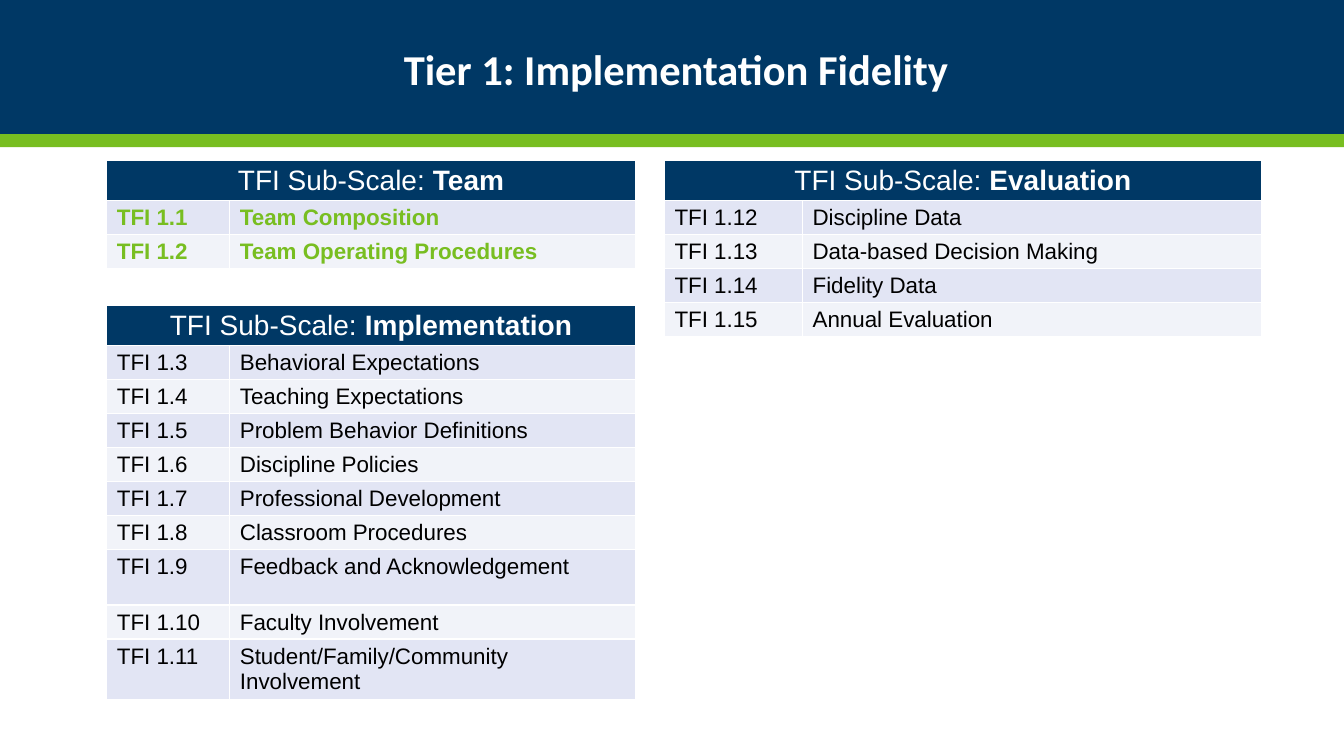
from pptx import Presentation
from pptx.dml.color import RGBColor
from pptx.enum.shapes import MSO_SHAPE
from pptx.enum.text import MSO_ANCHOR, PP_ALIGN
from pptx.util import Inches, Pt

COLORS = {"navy": "003865", "green": "78BE21", "white": "FFFFFF", "black": "000000",
          "odd": "E2E5F4", "even": "F1F3F9"}

TABLES = [
    {"name": "Evaluation", "left": 6.59, "top": 1.59, "cols": [1.37, 4.55], "first": 12,
     "items": ["Discipline Data", "Data-based Decision Making", "Fidelity Data",
               "Annual Evaluation"],
     "color": "black", "bold": False},
    {"name": "Implementation", "left": 1.06, "top": 3.03, "cols": [1.22, 4.02], "first": 3,
     "items": ["Behavioral Expectations", "Teaching Expectations",
               "Problem Behavior Definitions", "Discipline Policies",
               "Professional Development", "Classroom Procedures",
               "Feedback and Acknowledgement", "Faculty Involvement",
               "Student/Family/Community Involvement"],
     "color": "black", "bold": False},
    {"name": "Team", "left": 1.06, "top": 1.59, "cols": [1.22, 4.02], "first": 1,
     "items": ["Team Composition", "Team Operating Procedures"],
     "color": "green", "bold": True},
]
ROW_HEIGHTS = {"Feedback and Acknowledgement": 0.55,
               "Student/Family/Community Involvement": 0.6}


def rgb(name):
    return RGBColor.from_string(COLORS[name])


def format_run(r, font, size, color, bold):
    r.font.name = font
    r.font.size = Pt(size)
    r.font.color.rgb = rgb(color)
    r.font.bold = bold


prs = Presentation()
prs.slide_width = Inches(13.33)
prs.slide_height = Inches(7.5)
s = prs.slides.add_slide(prs.slide_layouts[5])

for top, height, color in [(0, 1.33, "navy"), (1.33, 0.13, "green")]:
    sp = s.shapes.add_shape(MSO_SHAPE.RECTANGLE, 0, Inches(top), prs.slide_width, Inches(height))
    sp.shadow.inherit = False
    sp.fill.solid()
    sp.fill.fore_color.rgb = rgb(color)
    sp.line.fill.background()

for t in TABLES:
    heights = [0.38] + [ROW_HEIGHTS.get(item, 0.32) for item in t["items"]]
    tbl = s.shapes.add_table(len(heights), 2, Inches(t["left"]), Inches(t["top"]),
                             Inches(sum(t["cols"])), Inches(sum(heights))).table
    for col, width in zip(tbl.columns, t["cols"]):
        col.width = Inches(width)
    for row, height in zip(tbl.rows, heights):
        row.height = Inches(height)
    for cell in tbl.iter_cells():
        cell.margin_top = Inches(0.05)
        cell.margin_bottom = Inches(0.04)

    header = tbl.cell(0, 0)
    header.merge(tbl.cell(0, 1))
    header.fill.solid()
    header.fill.fore_color.rgb = rgb("navy")
    p = header.text_frame.paragraphs[0]
    p.alignment = PP_ALIGN.CENTER
    for text, bold in [("TFI Sub-Scale: ", False), (t["name"], True)]:
        r = p.add_run()
        r.text = text
        format_run(r, "Arial", 20, "white", bold)

    for i, item in enumerate(t["items"], 1):
        for j, text in enumerate([f"TFI 1.{t['first'] + i - 1}", item]):
            cell = tbl.cell(i, j)
            cell.fill.solid()
            cell.fill.fore_color.rgb = rgb("odd" if i % 2 else "even")
            cell.text_frame.text = text
            format_run(cell.text_frame.paragraphs[0].runs[0], "Arial", 16, t["color"], t["bold"])

title = s.shapes.title
title.element.getparent().append(title.element)
title.left, title.top = Inches(0.04), Inches(0.32)
title.width, title.height = Inches(13.33), Inches(0.78)
tf = title.text_frame
tf.text = "Tier 1: Implementation Fidelity"
tf.vertical_anchor = MSO_ANCHOR.MIDDLE
p = tf.paragraphs[0]
p.alignment = PP_ALIGN.CENTER
p.line_spacing = 0.9
format_run(p.runs[0], "Calibri", 30.4, "white", True)

prs.save("out.pptx")
